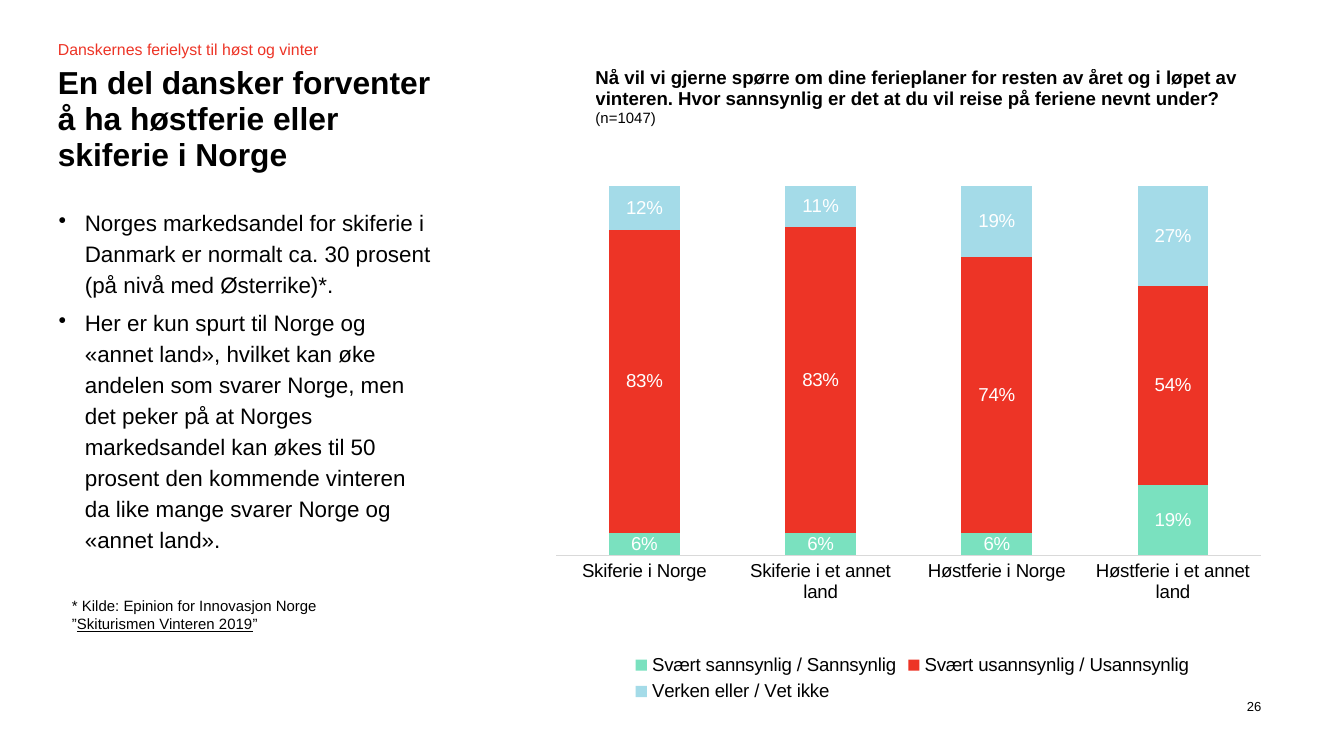
from lxml.etree import SubElement
from pptx import Presentation
from pptx.chart.data import CategoryChartData
from pptx.dml.color import RGBColor
from pptx.enum.chart import XL_CHART_TYPE, XL_LEGEND_POSITION, XL_TICK_MARK
from pptx.enum.text import MSO_ANCHOR
from pptx.oxml import parse_xml
from pptx.oxml.ns import nsdecls, qn
from pptx.util import Pt

COLORS = {
    "text": "000000",
    "white": "FFFFFF",
    "red": "ED3426",
    "green": "7AE1BF",
    "blue": "A4DBE8",
    "axis": "D9D9D9",
}
FONT = "Arial"


class SlideBuilder:
    """Holds the style and the current slide, and adds each kind of element."""

    def __init__(self, slide):
        self.slide = slide

    def color(self, name):
        return RGBColor.from_string(COLORS[name])

    def style(self, font, size, color="text", bold=False):
        font.name = FONT
        font.size = Pt(size)
        font.bold = bold
        font.color.rgb = self.color(color)

    def text(self, box, paragraphs, size, color="text", bold=False, wrap=True, inset=(0, 0),
             spacing=None, gap=0, bullet_indent=0, fill=None):
        shape = self.slide.shapes.add_textbox(*map(Pt, box))
        if fill:
            shape.fill.solid()
            shape.fill.fore_color.rgb = self.color(fill)
        frame = shape.text_frame
        frame.word_wrap = wrap
        frame.margin_left = frame.margin_right = Pt(inset[0])
        frame.margin_top = frame.margin_bottom = Pt(inset[1])
        frame.text = "\n".join(paragraphs)
        for index, paragraph in enumerate(frame.paragraphs):
            if bullet_indent:
                self.bullet(paragraph, bullet_indent)
            if spacing:
                paragraph.line_spacing = spacing
            if gap:
                paragraph.space_before = Pt(gap if index else 0)
                paragraph.space_after = Pt(gap)
            for run in paragraph.runs:
                self.style(run.font, size, color, bold)
        return frame

    def bullet(self, paragraph, indent):
        properties = paragraph._p.get_or_add_pPr()
        properties.set("marL", str(Pt(indent)))
        properties.set("indent", str(-Pt(indent)))
        SubElement(properties, qn("a:buChar"), char="•")

    def source_note(self, box, lead, title, size):
        paragraph = self.text(box, [lead], size, inset=(7.2, 3.6)).paragraphs[0]
        for text, underline in ((title, True), ("”", False)):
            run = paragraph.add_run()
            run.text = text
            self.style(run.font, size)
            run.font.underline = underline

    def question_table(self, box, lines):
        table = self.slide.shapes.add_table(1, 1, *map(Pt, box)).table
        cell = table.cell(0, 0)
        cell.fill.background()
        cell.margin_left = cell.margin_top = cell.margin_right = 0
        cell.margin_bottom = Pt(6)
        cell.vertical_anchor = MSO_ANCHOR.TOP
        properties = cell._tc.get_or_add_tcPr()
        for index, side in enumerate(("lnL", "lnR", "lnT", "lnB")):
            properties.insert(index, parse_xml(
                f'<a:{side} {nsdecls("a")} w="{Pt(1)}"><a:solidFill>'
                f'<a:srgbClr val="{COLORS["white"]}"/></a:solidFill></a:{side}>'))
        cell.text_frame.text = "\n".join(text for text, _, _ in lines)
        for paragraph, (_, size, bold) in zip(cell.text_frame.paragraphs, lines):
            for run in paragraph.runs:
                self.style(run.font, size, bold=bold)

    def stacked_chart(self, box, categories, series, plot_area, size):
        data = CategoryChartData(number_format="###0%")
        data.categories = categories
        for name, values, _ in series:
            data.add_series(name, values)
        chart = self.slide.shapes.add_chart(
            XL_CHART_TYPE.COLUMN_STACKED_100, *map(Pt, box), data).chart
        self.style(chart.font, size)
        chart.has_title = False
        chart.has_legend = True
        chart.legend.position = XL_LEGEND_POSITION.BOTTOM
        chart.legend.include_in_layout = False
        self.style(chart.legend.font, size)

        category_axis = chart.category_axis
        category_axis.major_tick_mark = XL_TICK_MARK.NONE
        category_axis.format.line.color.rgb = self.color("axis")
        category_axis.format.line.width = Pt(0.75)
        self.style(category_axis.tick_labels.font, size)
        chart.value_axis.has_major_gridlines = False
        chart.value_axis.major_unit = 0.2
        chart.value_axis.visible = False

        plot = chart.plots[0]
        plot.gap_width = 150
        plot.overlap = 100
        plot.vary_by_categories = False
        for plotted, (_, _, color) in zip(plot.series, series):
            plotted.format.fill.solid()
            plotted.format.fill.fore_color.rgb = self.color(color)
            labels = plotted.data_labels
            labels.show_value = True
            labels.number_format = "###0%"
            labels.number_format_is_linked = False
            self.style(labels.font, size, "white")
        self.place_plot(chart, plot_area)

    def place_plot(self, chart, plot_area):
        area = chart._chartSpace.chart.plotArea
        for layout in area.findall(qn("c:layout")):
            area.remove(layout)
        layout = parse_xml(f'<c:layout {nsdecls("c")}/>')
        manual = SubElement(layout, qn("c:manualLayout"))
        settings = [("layoutTarget", "inner"), ("xMode", "edge"), ("yMode", "edge")]
        for tag, value in settings + list(zip("xywh", plot_area)):
            SubElement(manual, qn(f"c:{tag}"), val=str(value))
        area.insert(0, layout)


def main():
    presentation = Presentation()
    presentation.slide_width = Pt(720)
    presentation.slide_height = Pt(405)
    builder = SlideBuilder(presentation.slides.add_slide(presentation.slide_layouts[6]))

    builder.text((668, 374.4, 20, 8.6), ["26"], 7)
    builder.text((31, 21, 141, 10), ["Danskernes ferielyst til høst og vinter"], 8.5, "red",
                 wrap=False)
    builder.text((31, 35, 210, 59), [
        "En del dansker forventer å ha høstferie eller skiferie i Norge",
    ], 17, bold=True, spacing=0.95, fill="white")
    builder.question_table((319, 36.5, 371, 39.5), [
        ("Nå vil vi gjerne spørre om dine ferieplaner for resten av året og i løpet av vinteren. "
         "Hvor sannsynlig er det at du vil reise på feriene nevnt under?", 10, True),
        ("(n=1047)", 8, False),
    ])
    builder.text((31.5, 110, 202.5, 102), [
        "Norges markedsandel for skiferie i Danmark er normalt ca. 30 prosent "
        "(på nivå med Østerrike)*.",
        "Her er kun spurt til Norge og «annet land», hvilket kan øke andelen som svarer Norge, "
        "men det peker på at Norges markedsandel kan økes til 50 prosent den kommende vinteren "
        "da like mange svarer Norge og «annet land».",
    ], 12, spacing=1.15, gap=2, bullet_indent=14)
    builder.stacked_chart(
        (290, 88, 397.5, 291),
        ["Skiferie i Norge", "Skiferie i et annet land",
         "Høstferie i Norge", "Høstferie i et annet land"],
        [
            ("Svært sannsynlig / Sannsynlig", (0.06, 0.06, 0.06, 0.19), "green"),
            ("Svært usannsynlig / Usannsynlig", (0.83, 0.83, 0.74, 0.54), "red"),
            ("Verken eller / Vet ikke", (0.12, 0.11, 0.19, 0.27), "blue"),
        ],
        plot_area=(0.02, 0.04, 0.95, 0.68), size=10)
    builder.source_note((31.5, 316, 188, 26.5), "* Kilde: Epinion for Innovasjon Norge\v”",
                        "Skiturismen Vinteren 2019", 8)
    presentation.save("out.pptx")


if __name__ == "__main__":
    main()
